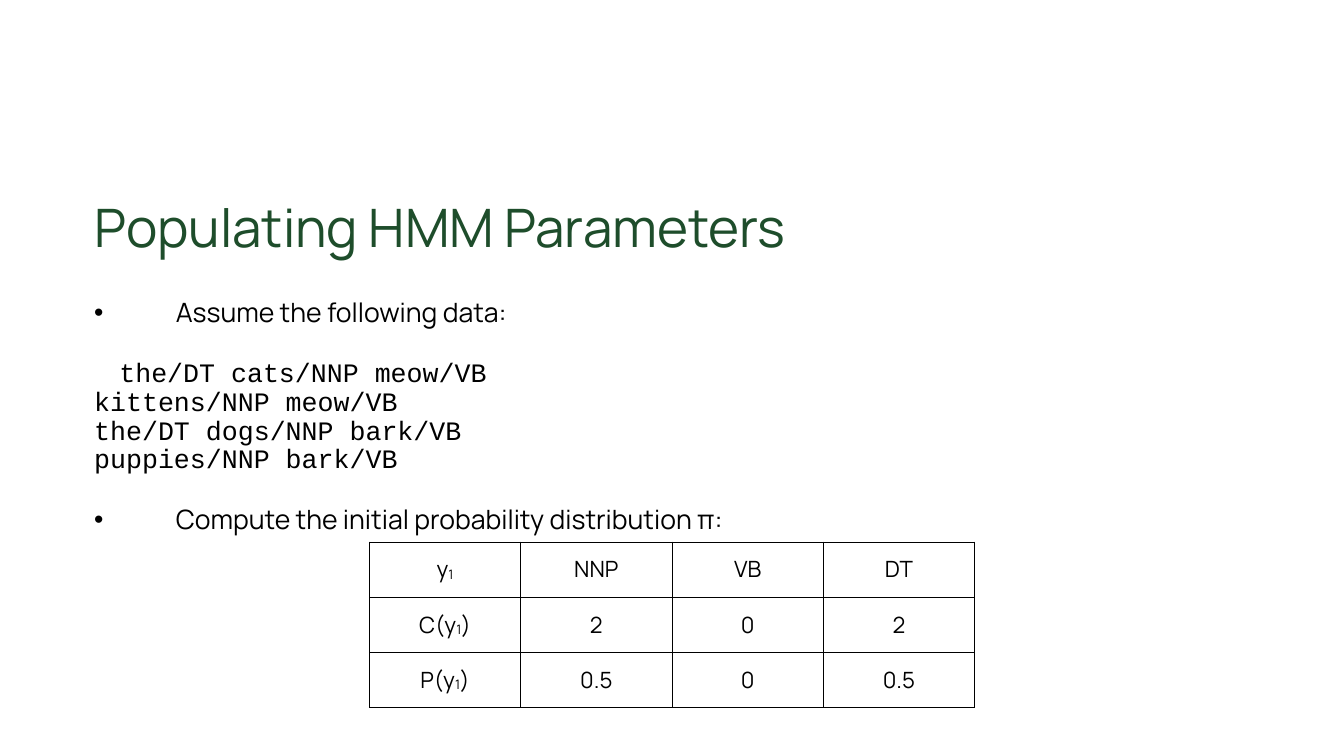
from dataclasses import dataclass

from lxml.etree import SubElement
from pptx import Presentation
from pptx.dml.color import RGBColor
from pptx.enum.text import MSO_ANCHOR, PP_ALIGN
from pptx.oxml import parse_xml
from pptx.oxml.ns import nsdecls, qn
from pptx.util import Inches, Pt


@dataclass(frozen=True)
class Theme:
    font: str = "Manrope"
    code_font: str = "Courier New"
    green: str = "1E4D2B"
    black: str = "000000"
    title_size: float = 75.7
    body_size: float = 38
    table_size: float = 32
    line_spacing: float = 0.9
    space_before: float = 45
    border_width: float = 1


@dataclass(frozen=True)
class BodyItem:
    lines: tuple[str, ...]
    font: str
    margin: float
    indent: float
    level: int = 0
    bullet: bool = False


THEME = Theme()


def bullet_item(text: str) -> BodyItem:
    return BodyItem((text,), THEME.font, 1.62, -1.62, bullet=True)


BODY = (
    bullet_item("Assume the following data:"),
    BodyItem(
        (
            "the/DT cats/NNP meow/VB",
            "kittens/NNP meow/VB",
            "the/DT dogs/NNP bark/VB",
            "puppies/NNP bark/VB",
        ),
        THEME.code_font, 0, 0.5, level=1,
    ),
    bullet_item("Compute the initial probability distribution π:"),
)

# An underscore marks the next character as a subscript.
TABLE_ROWS = (
    ("y_1", "NNP", "VB", "DT"),
    ("C(y_1)", "2", "0", "2"),
    ("P(y_1)", "0.5", "0", "0.5"),
)


def add_run(paragraph, text: str, size: float, color: str, font: str = THEME.font):
    run = paragraph.add_run()
    run.text = text
    run.font.name = font
    run.font.size = Pt(size)
    run.font.color.rgb = RGBColor.from_string(color)
    return run


def add_text_frame(slide, top: float, height: float, anchor: MSO_ANCHOR):
    box = slide.shapes.add_textbox(Inches(1.77), Inches(top), Inches(23.92), Inches(height))
    frame = box.text_frame
    frame.word_wrap = True
    frame.vertical_anchor = anchor
    frame.margin_left = frame.margin_right = Inches(0.1)
    frame.margin_top = frame.margin_bottom = Inches(0.1)
    return frame


def add_title(slide, text: str) -> None:
    paragraph = add_text_frame(slide, 3.73, 1.68, MSO_ANCHOR.MIDDLE).paragraphs[0]
    paragraph.line_spacing = THEME.line_spacing
    add_run(paragraph, text, THEME.title_size, THEME.green)


def add_body(slide, items: tuple[BodyItem, ...]) -> None:
    frame = add_text_frame(slide, 5.84, 7.78, MSO_ANCHOR.TOP)
    for index, item in enumerate(items):
        paragraph = frame.add_paragraph() if index else frame.paragraphs[0]
        paragraph.level = item.level
        paragraph.line_spacing = THEME.line_spacing
        if index:
            paragraph.space_before = Pt(THEME.space_before)
        properties = paragraph._p.get_or_add_pPr()
        properties.set("marL", str(Inches(item.margin)))
        properties.set("indent", str(Inches(item.indent)))
        if item.bullet:
            SubElement(properties, qn("a:buFont"), typeface="Arial")
            SubElement(properties, qn("a:buChar"), char="•")
        for number, line in enumerate(item.lines):
            if number:
                paragraph.add_line_break()
            add_run(paragraph, line, THEME.body_size, THEME.black, item.font)


def add_borders(cell) -> None:
    properties = cell._tc.get_or_add_tcPr()
    for position, side in enumerate(("lnL", "lnR", "lnT", "lnB")):
        border = parse_xml(
            f'<a:{side} {nsdecls("a")} w="{Pt(THEME.border_width)}"><a:solidFill>'
            f'<a:srgbClr val="{THEME.black}"/></a:solidFill></a:{side}>'
        )
        properties.insert(position, border)


def fill_cell(cell, text: str) -> None:
    cell.vertical_anchor = MSO_ANCHOR.MIDDLE
    cell.margin_left = cell.margin_right = Inches(0.06)
    cell.margin_top = cell.margin_bottom = Inches(0.06)
    cell.fill.background()
    add_borders(cell)
    paragraph = cell.text_frame.paragraphs[0]
    paragraph.alignment = PP_ALIGN.CENTER
    base, _, marked = text.partition("_")
    for part, lowered in ((base, False), (marked[:1], True), (marked[1:], False)):
        if part:
            run = add_run(paragraph, part, THEME.table_size, THEME.black)
            if lowered:
                run._r.get_or_add_rPr().set("baseline", "-6000")


def add_probability_table(slide, rows: tuple[tuple[str, ...], ...]) -> None:
    table = slide.shapes.add_table(
        len(rows), len(rows[0]), Inches(7.33), Inches(10.75), Inches(12.01), Inches(3.28)
    ).table
    table.first_row = table.horz_banding = False
    for row_index, row in enumerate(rows):
        for column_index, text in enumerate(row):
            fill_cell(table.cell(row_index, column_index), text)


def main() -> None:
    presentation = Presentation()
    presentation.slide_width = Inches(26.67)
    presentation.slide_height = Inches(15)
    slide = presentation.slides.add_slide(presentation.slide_layouts[6])
    add_title(slide, "Populating HMM Parameters")
    add_body(slide, BODY)
    add_probability_table(slide, TABLE_ROWS)
    presentation.save("out.pptx")


if __name__ == "__main__":
    main()
